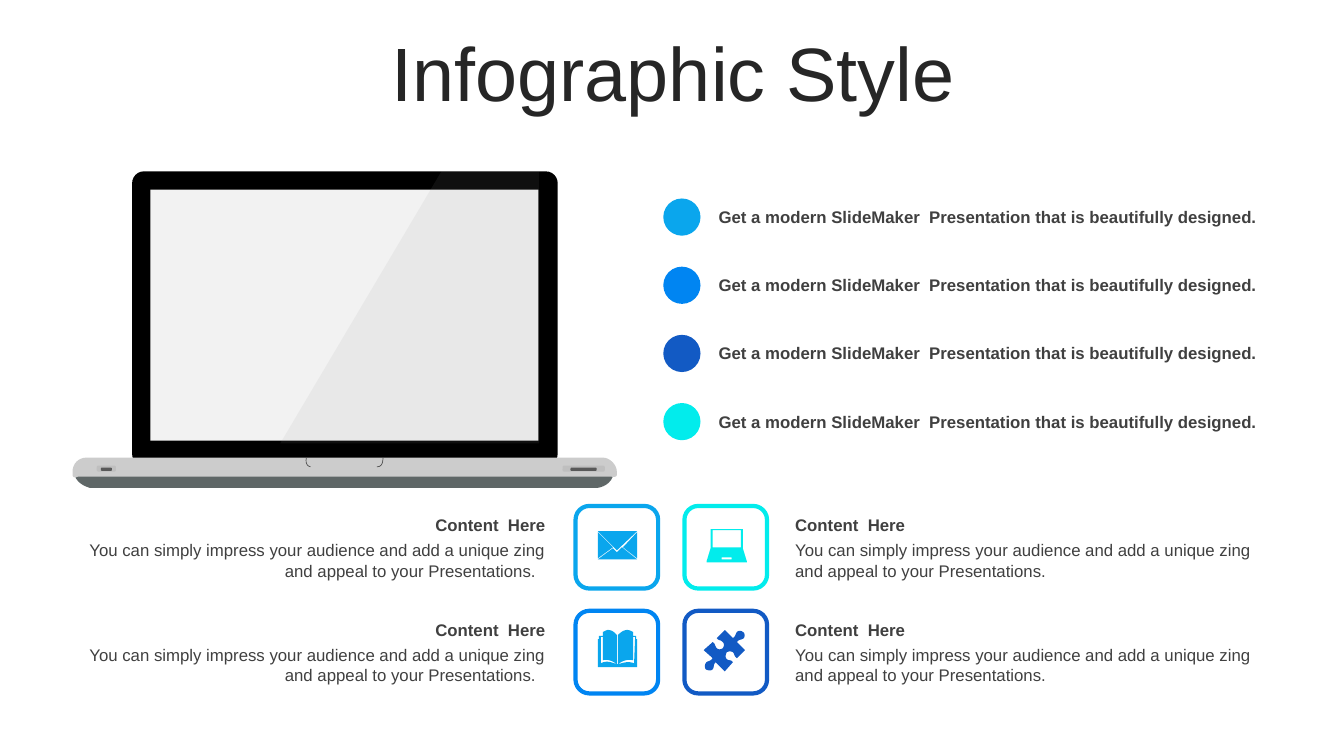
import dataclasses

import lxml.etree
import pptx
import pptx.dml.color
import pptx.enum.shapes
import pptx.enum.text
import pptx.oxml.ns
import pptx.util

Pt = pptx.util.Pt
MSO = pptx.enum.shapes.MSO_SHAPE
ALIGN = pptx.enum.text.PP_ALIGN
ANCHOR = pptx.enum.text.MSO_ANCHOR


@dataclasses.dataclass(frozen=True)
class Theme:
    font: str = "Arial"
    title_size: float = 54
    text_size: float = 12
    title: str = "262626"
    text: str = "404040"
    sky: str = "0AA6ED"
    azure: str = "0085F2"
    navy: str = "125AC4"
    cyan: str = "02ECEC"
    bezel: str = "000000"
    screen: str = "F2F2F2"
    base: str = "CCCCCC"
    foot: str = "5F6767"
    notch: str = "4D4D4D"
    port: str = "BFBFBF"
    slot: str = "595959"
    glare: str = "999999"


class SlideBuilder:
    UNIT = 0.72
    CURVE_STEPS = 8

    def __init__(self, slide, theme):
        self.slide = slide
        self.theme = theme

    def paint(self, sp, fill=None, line=None, width=0, alpha=None):
        sp.shadow.inherit = False
        if fill:
            sp.fill.solid()
            sp.fill.fore_color.rgb = pptx.dml.color.RGBColor.from_string(fill)
        else:
            sp.fill.background()
        if line:
            sp.line.color.rgb = pptx.dml.color.RGBColor.from_string(line)
            sp.line.width = Pt(width)
        else:
            sp.line.fill.background()
        if alpha:
            clr = sp.fill._xPr.find(".//" + pptx.oxml.ns.qn("a:srgbClr"))
            lxml.etree.SubElement(clr, pptx.oxml.ns.qn("a:alpha")).set("val", str(alpha * 1000))

    def shape(self, kind, x, y, w, h, adj=None, **style):
        sp = self.slide.shapes.add_shape(kind, Pt(x), Pt(y), Pt(w), Pt(h))
        if adj is not None:
            sp.adjustments[0] = adj
        self.paint(sp, **style)

    def outline(self, x, y, commands, **style):
        """Draw M, L, C and Z commands, measured in UNIT steps from x, y."""
        tokens = iter(commands.split())
        builder, pen = None, (0, 0)

        def point():
            return float(next(tokens)), float(next(tokens))

        def place(pt):
            return Pt(x + pt[0] * self.UNIT), Pt(y + pt[1] * self.UNIT)

        for token in tokens:
            if token == "Z":
                builder.add_line_segments([], close=True)
            elif token == "M":
                pen = point()
                if builder is None:
                    builder = self.slide.shapes.build_freeform(*place(pen))
                else:
                    builder.move_to(*place(pen))
            elif token == "L":
                pen = point()
                builder.add_line_segments([place(pen)], close=False)
            else:
                knots = [pen, point(), point(), point()]
                curve = []
                for step in range(1, self.CURVE_STEPS + 1):
                    t = step / self.CURVE_STEPS
                    weights = ((1 - t) ** 3, 3 * t * (1 - t) ** 2, 3 * t * t * (1 - t), t ** 3)
                    curve.append(place([sum(w * k[i] for w, k in zip(weights, knots)) for i in (0, 1)]))
                builder.add_line_segments(curve, close=False)
                pen = knots[-1]
        self.paint(builder.convert_to_shape(), **style)

    def format(self, p, size, color, bold=False, align=ALIGN.LEFT):
        p.alignment = align
        p.font.name = self.theme.font
        p.font.size = Pt(size)
        p.font.bold = bold
        p.font.color.rgb = pptx.dml.color.RGBColor.from_string(color)

    def text(self, x, y, w, h, words, anchor=ANCHOR.TOP, **style):
        tf = self.slide.shapes.add_textbox(Pt(x), Pt(y), Pt(w), Pt(h)).text_frame
        tf.word_wrap = True
        tf.vertical_anchor = anchor
        tf.text = words
        self.format(tf.paragraphs[0], self.theme.text_size, self.theme.text, **style)

    def title(self, x, y, w, h, words):
        sp = self.slide.shapes.title
        sp.left, sp.top, sp.width, sp.height = Pt(x), Pt(y), Pt(w), Pt(h)
        tf = sp.text_frame
        tf.text = words
        tf.word_wrap = True
        tf.auto_size = pptx.enum.text.MSO_AUTO_SIZE.NONE
        tf.vertical_anchor = ANCHOR.MIDDLE
        p = tf.paragraphs[0]
        p.line_spacing = 0.9
        self.format(p, self.theme.title_size, self.theme.title, align=ALIGN.CENTER)

    def laptop(self, x, y):
        t = self.theme
        self.outline(x, y, "M 523 314 C 523 314 534 313 538 303 C 538 300 536 298 533 298 L 17 300 "
                     "L 10 300 C 8 300 5 302 5 304 C 9 311 16 313 19 314 Z", fill=t.foot)
        self.shape(MSO.ROUNDED_RECTANGLE, x + 44, y, 304, 210.2, 0.04, fill=t.bezel)
        self.shape(MSO.RECTANGLE, x + 57, y + 13, 277.2, 179.3, fill=t.screen)
        self.outline(x, y, "M 16 284 L 528 284 C 535 284 542 291 542 298 L 542 301 C 542 301 542 304 537 303 "
                     "L 7 303 C 5 304 2 304 2 301 L 2 298 C 2 290 8 284 16 284 Z", fill=t.base)
        for hook in ("M 234 284 C 234 284 232 292 238 293", "M 310 284 C 310 292 307 293 304 293"):
            self.outline(x, y, hook, line=t.notch, width=0.5)
        for left, port, slot in ((18.7, 13.7, 7.9), (351.4, 30.2, 18.7)):
            self.shape(MSO.ROUNDED_RECTANGLE, x + left, y + 210.2, port, 4.3, 0.28, fill=t.port)
            self.shape(MSO.ROUNDED_RECTANGLE, x + left + (port - slot) / 2, y + 211.7, slot, 2.2, 0.28, fill=t.slot)
        self.outline(x, y, "M 368 0 L 465 0 L 465 270 L 208 270 Z", fill=t.glare, alpha=10)


ENVELOPE = ("M 24 16 L 39 28 L 0 28 L 15 17 L 19 21 Z M 39 1 L 39 27 L 25 16 Z "
            "M 0 1 L 15 16 L 0 27 Z M 0 0 L 39 0 L 19 19 Z")
COMPUTER = ("M 15 28 L 15 30 L 25 30 L 25 28 Z M 6 1 L 6 18 L 34 18 L 34 1 Z "
            "M 4 0 L 36 0 L 36 19 L 40 32 L 40 33 L 0 33 L 0 32 L 4 19 Z")
BOOK = ("M 19 34 L 20 34 C 27 32 30 31 36 33 L 37 7 L 35 7 L 35 30 C 30 29 25 30 20 34 L 20 5 "
        "C 23 2 26 0 29 0 C 31 0 33 1 35 2 L 35 6 L 38 6 L 38 9 L 39 9 L 39 37 L 0 37 L 0 9 L 1 9 "
        "L 1 6 L 5 6 L 5 2 C 7 1 9 0 10 0 C 14 0 16 2 19 5 L 19 34 C 14 30 9 29 5 30 L 5 7 L 3 7 "
        "L 3 33 C 9 30 13 32 19 34 Z")
PUZZLE = ("M 39 2 C 41 3 41 6 40 8 C 38 10 35 9 33 12 L 41 20 L 33 28 C 30 26 31 24 29 22 "
          "C 27 21 25 21 23 22 C 22 24 21 27 23 29 C 26 31 27 29 29 32 L 21 41 L 12 32 "
          "C 9 35 11 36 9 39 C 7 41 4 40 2 39 C 1 37 1 35 2 33 C 4 30 6 32 9 28 L 0 20 L 9 12 "
          "C 12 14 11 16 13 18 C 15 20 18 19 19 18 C 20 17 21 14 19 12 C 16 9 15 11 13 8 L 21 0 "
          "L 29 8 C 32 6 31 5 33 2 C 35 0 38 1 39 2 Z")
FEATURE = "Get a modern SlideMaker  Presentation that is beautifully designed."
HEADING = "Content  Here"
DETAIL = "You can simply impress your audience and add a unique zing and appeal to your Presentations."


def main():
    prs = pptx.Presentation()
    prs.slide_width, prs.slide_height = Pt(960), Pt(540)
    theme = Theme()
    s = SlideBuilder(prs.slides.add_slide(prs.slide_layouts[5]), theme)

    s.title(25.2, 26.6, 911.5, 56.9, "Infographic Style")
    s.laptop(50.4, 122.4)

    for row, color in enumerate((theme.sky, theme.azure, theme.navy, theme.cyan)):
        y = 141.8 + row * 48.7
        s.shape(MSO.OVAL, 473.8, y, 26.6, 26.6, fill=color)
        s.text(506.2, y + 2.3, 406.1, 21.6, FEATURE, bold=True)

    left = (411.1, 48.2, 348.5, ALIGN.RIGHT, DETAIL + "  ")
    right = (488.9, 560.9, 350.6, ALIGN.LEFT, DETAIL)
    cards = (
        (0, left, theme.sky, ENVELOPE, theme.sky, 15.9, 18),
        (0, right, theme.cyan, COMPUTER, theme.cyan, 15.8, 16.6),
        (1, left, theme.azure, BOOK, theme.sky, 15.9, 13.7),
        (1, right, theme.navy, PUZZLE, theme.navy, 13.7, 13.7),
    )
    for row, side, border, icon, icon_color, dx, dy in cards:
        box_x, text_x, text_w, align, detail = side
        y = 361.4 + row * 74.9
        s.shape(MSO.ROUNDED_RECTANGLE, box_x, y, 59, 59, line=border, width=3)
        s.outline(box_x + dx, y + dy, icon, fill=icon_color)
        s.text(text_x, y + 2.9, text_w, 21.6, HEADING, ANCHOR.MIDDLE, bold=True, align=align)
        s.text(text_x, y + 20.9, text_w, 36, detail, align=align)

    prs.save("out.pptx")


if __name__ == "__main__":
    main()
